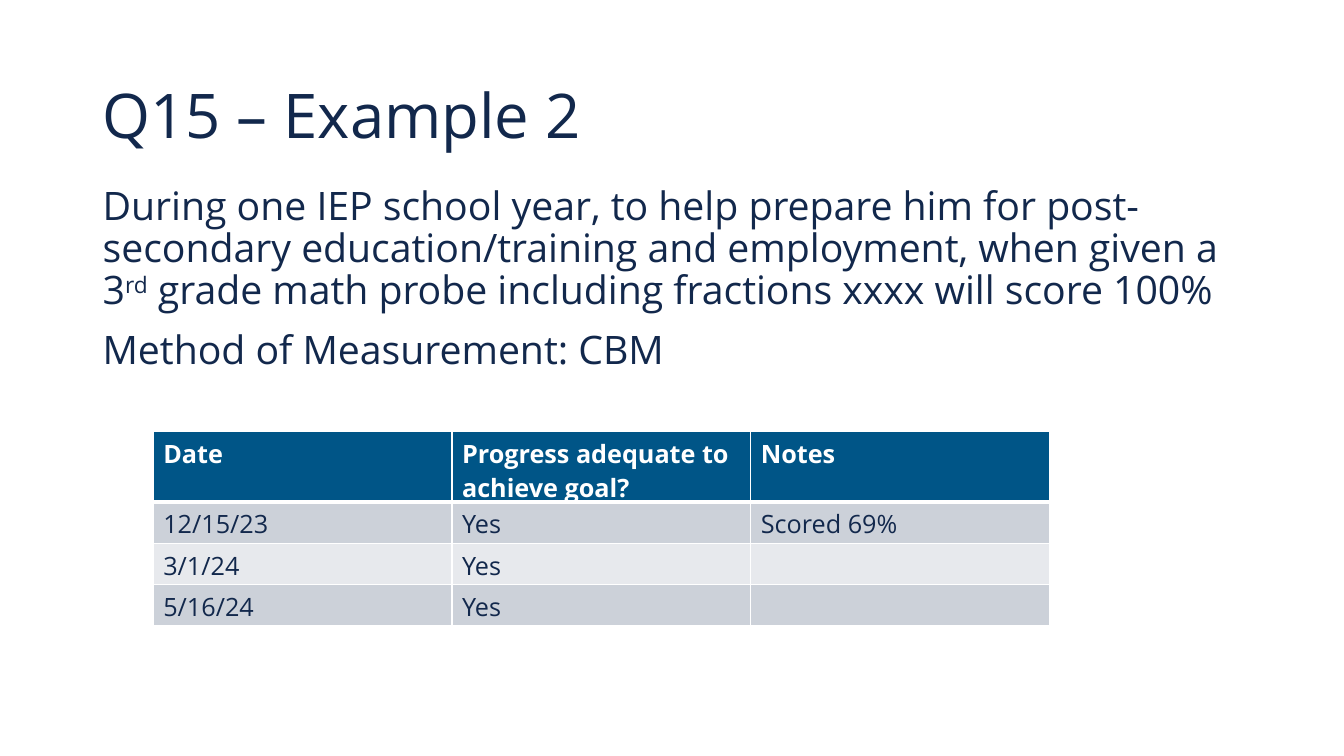
from dataclasses import dataclass

from lxml.etree import SubElement
from pptx import Presentation
from pptx.dml.color import RGBColor
from pptx.enum.text import MSO_ANCHOR
from pptx.oxml.ns import qn
from pptx.util import Inches, Pt

FONT = "Open Sans"
COLORS = {
    "navy": "12284C",
    "header": "005587",
    "white": "FFFFFF",
    "band_dark": "CCD1D9",
    "band_light": "E7E9ED",
}


@dataclass
class Span:
    text: str
    superscript: bool = False


@dataclass
class TextBlock:
    left: float
    top: float
    width: float
    height: float
    size: int
    anchor: MSO_ANCHOR
    line_spacing: float
    paragraphs: list[list[Span]]


@dataclass
class RowStyle:
    fill: str
    text: str
    bold: bool
    top_border: float
    bottom_border: float


TITLE = TextBlock(0.92, 0.4, 11.5, 1.45, 44, MSO_ANCHOR.MIDDLE, 1.0, [
    [Span("Q15 – Example 2")],
])
GOAL = TextBlock(0.92, 1.8, 11.5, 4.96, 28, MSO_ANCHOR.TOP, 0.9, [
    [
        Span("During one IEP school year, to help prepare him for post-secondary "
             "education/training and employment, when given a 3"),
        Span("rd", superscript=True),
        Span(" grade math probe including fractions xxxx will score 100%"),
    ],
    [Span("Method of Measurement: CBM")],
])
PROGRESS = [
    ("Date", "Progress adequate to achieve goal?", "Notes"),
    ("12/15/23", "Yes", "Scored 69%"),
    ("3/1/24", "Yes", ""),
    ("5/16/24", "Yes", ""),
]
ROW_STYLES = [
    RowStyle("header", "white", True, 1, 3),
    RowStyle("band_dark", "navy", False, 3, 1),
    RowStyle("band_light", "navy", False, 1, 1),
    RowStyle("band_dark", "navy", False, 1, 1),
]


def color(name: str) -> RGBColor:
    return RGBColor.from_string(COLORS[name])


def style_font(font, size: int, color_name: str, bold: bool = False) -> None:
    font.name = FONT
    font.size = Pt(size)
    font.bold = bold
    font.color.rgb = color(color_name)


def add_text(page, block: TextBlock) -> None:
    box = page.shapes.add_textbox(Inches(block.left), Inches(block.top),
                                  Inches(block.width), Inches(block.height))
    frame = box.text_frame
    frame.word_wrap = True
    frame.vertical_anchor = block.anchor
    for index, spans in enumerate(block.paragraphs):
        para = frame.add_paragraph() if index else frame.paragraphs[0]
        para.line_spacing = block.line_spacing
        if index:
            para.space_before = Pt(6)
        if len(block.paragraphs) > 1:
            para.space_after = Pt(6)
        style_font(para.font, block.size, "navy")
        for span in spans:
            run = para.add_run()
            run.text = span.text
            if span.superscript:
                run.font._element.set("baseline", "30000")


def add_borders(cell, style: RowStyle) -> None:
    properties = cell._tc.get_or_add_tcPr()
    widths = {"lnL": 1, "lnR": 1, "lnT": style.top_border, "lnB": style.bottom_border}
    for position, (tag, width) in enumerate(widths.items()):
        line = SubElement(properties, qn(f"a:{tag}"), w=str(Pt(width)))
        fill = SubElement(line, qn("a:solidFill"))
        SubElement(fill, qn("a:srgbClr"), val=COLORS["white"])
        properties.insert(position, line)


def add_progress_table(page) -> None:
    row_count, column_count = len(PROGRESS), len(PROGRESS[0])
    table = page.shapes.add_table(row_count, column_count, Inches(1.52), Inches(4.28),
                                  Inches(8.89), Inches(0.41 * row_count)).table
    for row_index, (values, style) in enumerate(zip(PROGRESS, ROW_STYLES)):
        for column_index, value in enumerate(values):
            cell = table.cell(row_index, column_index)
            cell.text = value
            cell.fill.solid()
            cell.fill.fore_color.rgb = color(style.fill)
            style_font(cell.text_frame.paragraphs[0].font, 18, style.text, style.bold)
            add_borders(cell, style)


def main() -> None:
    deck = Presentation()
    deck.slide_width = Inches(13.33)
    deck.slide_height = Inches(7.5)
    page = deck.slides.add_slide(deck.slide_layouts[6])
    for block in (GOAL, TITLE):
        add_text(page, block)
    add_progress_table(page)
    deck.save("out.pptx")


if __name__ == "__main__":
    main()
